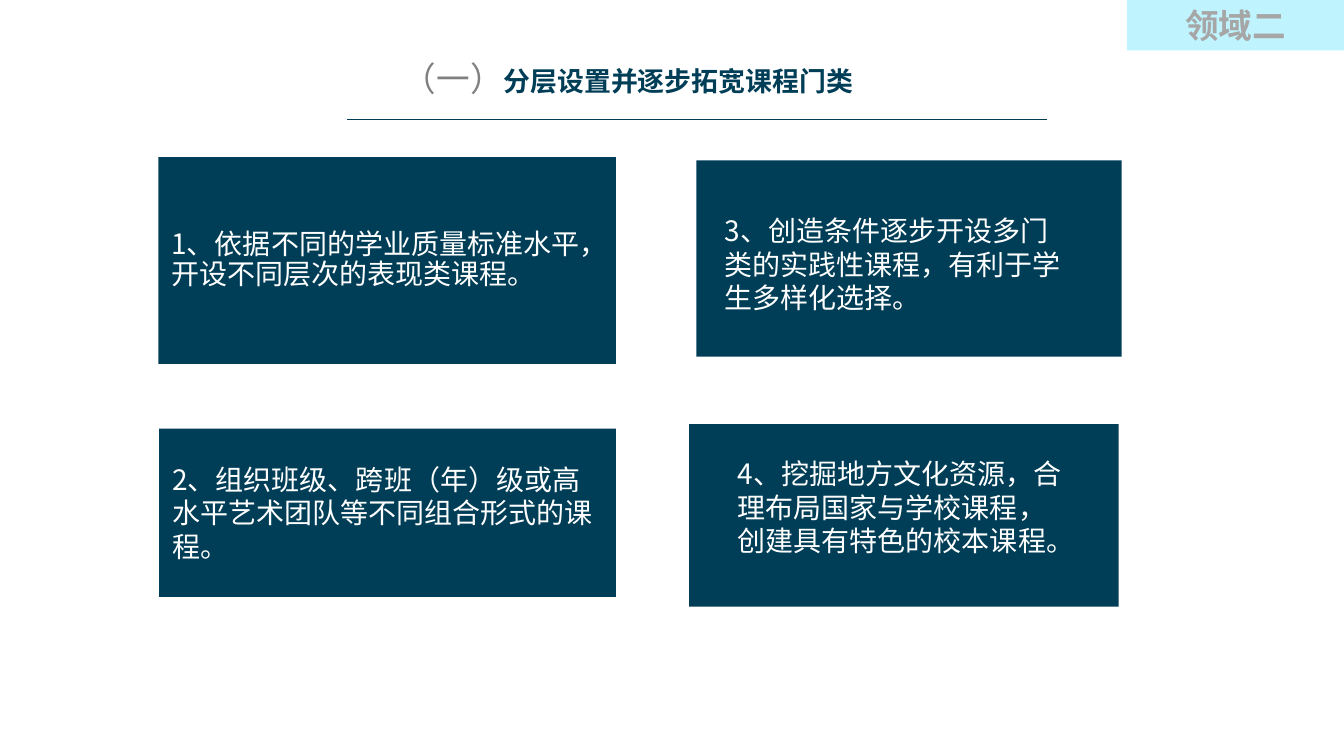
from lxml.etree import SubElement
from pptx import Presentation
from pptx.dml.color import RGBColor
from pptx.enum.shapes import MSO_CONNECTOR, MSO_SHAPE
from pptx.enum.text import MSO_ANCHOR, PP_ALIGN
from pptx.oxml.ns import qn
from pptx.util import Cm, Pt

HUES = {"navy": "003E57", "sky": "BFF4FF", "gray": "808080",
        "pale": "A6A6A6", "white": "FFFFFF"}
SANS = "Noto Sans CJK SC"
LATIN = "Calibri"

CARDS = [
    ((3.99, 3.96, 11.53, 5.21), "1、依据不同的学业质量标准水平，开设不同层次的表现类课程。", 0.9),
    ((4.01, 10.8, 11.51, 4.24), "2、组织班级、跨班（年）级或高水平艺术团队等不同组合形式的课程。", 1),
]
NOTES = [
    ((17.55, 4.04, 10.72, 4.95), (0.38, 0.3, 9.47, 3.76),
     "3、创造条件逐步开设多门类的实践性课程，有利于学生多样化选择。"),
    ((17.37, 10.69, 10.82, 4.6), (0.89, 0.64, 8.99, 2.9),
     "4、挖掘地方文化资源，合理布局国家与学校课程，创建具有特色的校本课程。"),
]


def tint(hue):
    return RGBColor.from_string(HUES[hue])


def add_run(para, text, size, font, hue, bold=False):
    run = para.add_run()
    run.text = text
    run.font.size = Pt(size)
    run.font.bold = bold
    run.font.name = font
    run.font.color.rgb = tint(hue)
    props = run._r.get_or_add_rPr()
    SubElement(props, qn("a:ea")).set("typeface", font)
    return props


def set_frame(shape, anchor, align, pad_x=0.33, pad_y=0.18):
    frame = shape.text_frame
    frame.word_wrap = True
    frame.vertical_anchor = anchor
    frame.margin_left = frame.margin_right = Cm(pad_x)
    frame.margin_top = frame.margin_bottom = Cm(pad_y)
    para = frame.paragraphs[0]
    para.alignment = align
    return para


def add_rect(slide, box, hue):
    rect = slide.shapes.add_shape(MSO_SHAPE.RECTANGLE, *map(Cm, box))
    rect.shadow.inherit = False
    rect.fill.solid()
    rect.fill.fore_color.rgb = tint(hue)
    rect.line.fill.background()
    return rect


def add_title(slide, box):
    left, top, wide, high = box
    text = slide.shapes.add_textbox(*map(Cm, box))
    para = set_frame(text, MSO_ANCHOR.BOTTOM, PP_ALIGN.CENTER, 0.2, 0.1)
    add_run(para, "（一）", 24, LATIN, "gray")
    props = add_run(para, "分层设置并逐步拓宽课程门类", 24, SANS, "navy", True)
    props.set("cap", "small")
    start, level = left + 2.72, top + 2.67
    rule = slide.shapes.add_connector(
        MSO_CONNECTOR.STRAIGHT, Cm(start), Cm(level), Cm(start + 17.65), Cm(level))
    rule.line.color.rgb = tint("navy")
    rule.line.width = Pt(0.25)
    SubElement(rule._element.spPr, qn("a:effectLst"))


def add_tag(slide, box):
    para = set_frame(add_rect(slide, box, "sky"), MSO_ANCHOR.MIDDLE,
                     PP_ALIGN.CENTER, 0.25, 0.13)
    add_run(para, "领域二", 24, LATIN, "pale", True)


def add_card(slide, box, text, pitch):
    para = set_frame(add_rect(slide, box, "navy"), MSO_ANCHOR.MIDDLE, PP_ALIGN.LEFT)
    para.line_spacing = pitch
    if pitch < 1:
        para.space_before = Pt(10)
    add_run(para, text, 20, SANS, "white")


def add_note(slide, box, inner, text):
    add_rect(slide, box, "navy")
    left, top, wide, high = inner
    spot = (box[0] + left, box[1] + top, wide, high)
    body = slide.shapes.add_textbox(*map(Cm, spot))
    para = set_frame(body, MSO_ANCHOR.BOTTOM, PP_ALIGN.LEFT)
    add_run(para, text, 20, SANS, "white")


def main():
    deck = Presentation()
    deck.slide_width, deck.slide_height = Cm(33.87), Cm(19.05)
    slide = deck.slides.add_slide(deck.slide_layouts[6])
    add_title(slide, (6.02, 0.33, 19.61, 2.24))
    add_tag(slide, (28.4, 0, 5.47, 1.27))
    for card in CARDS:
        add_card(slide, *card)
    for note in NOTES:
        add_note(slide, *note)
    deck.save("out.pptx")


if __name__ == "__main__":
    main()
